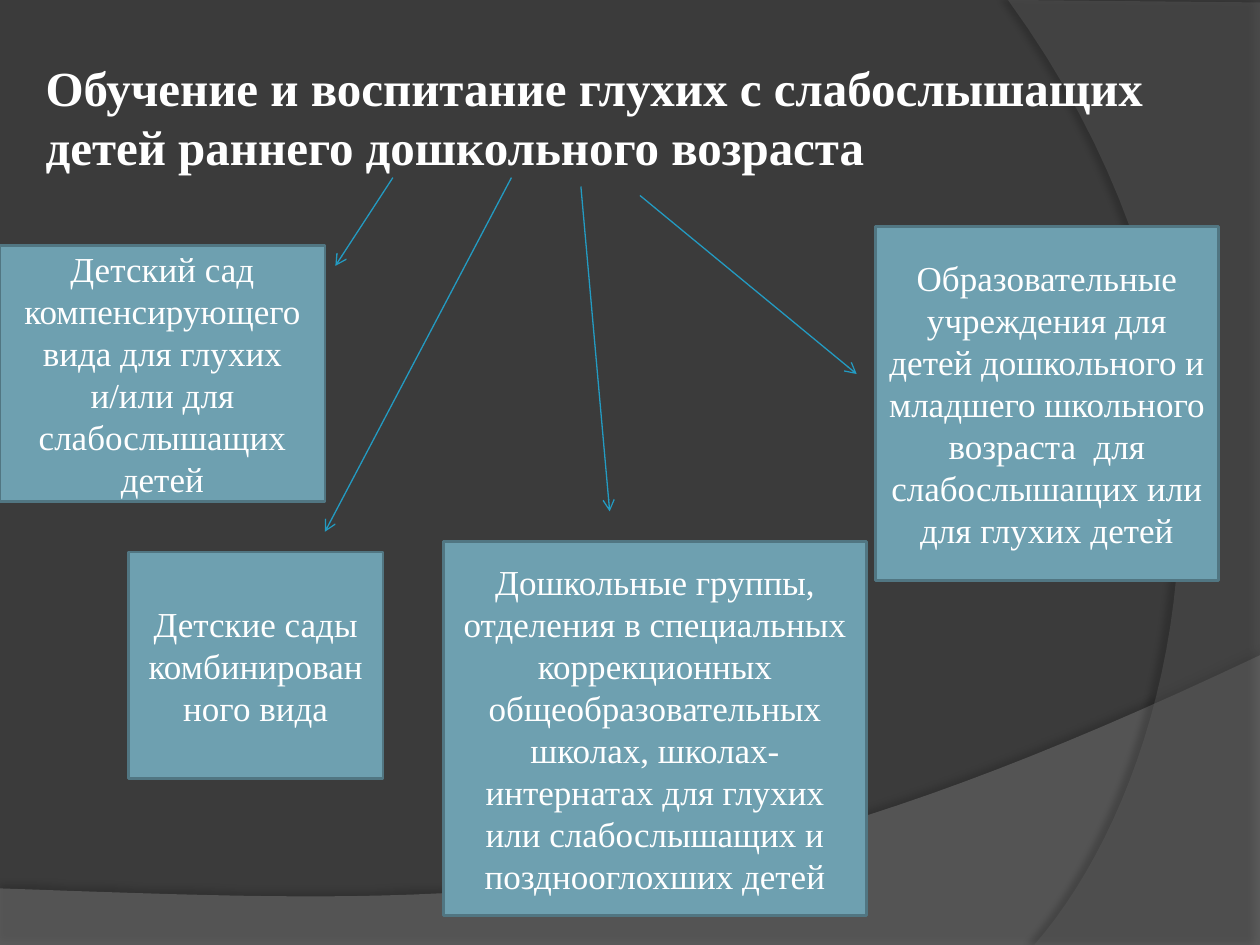
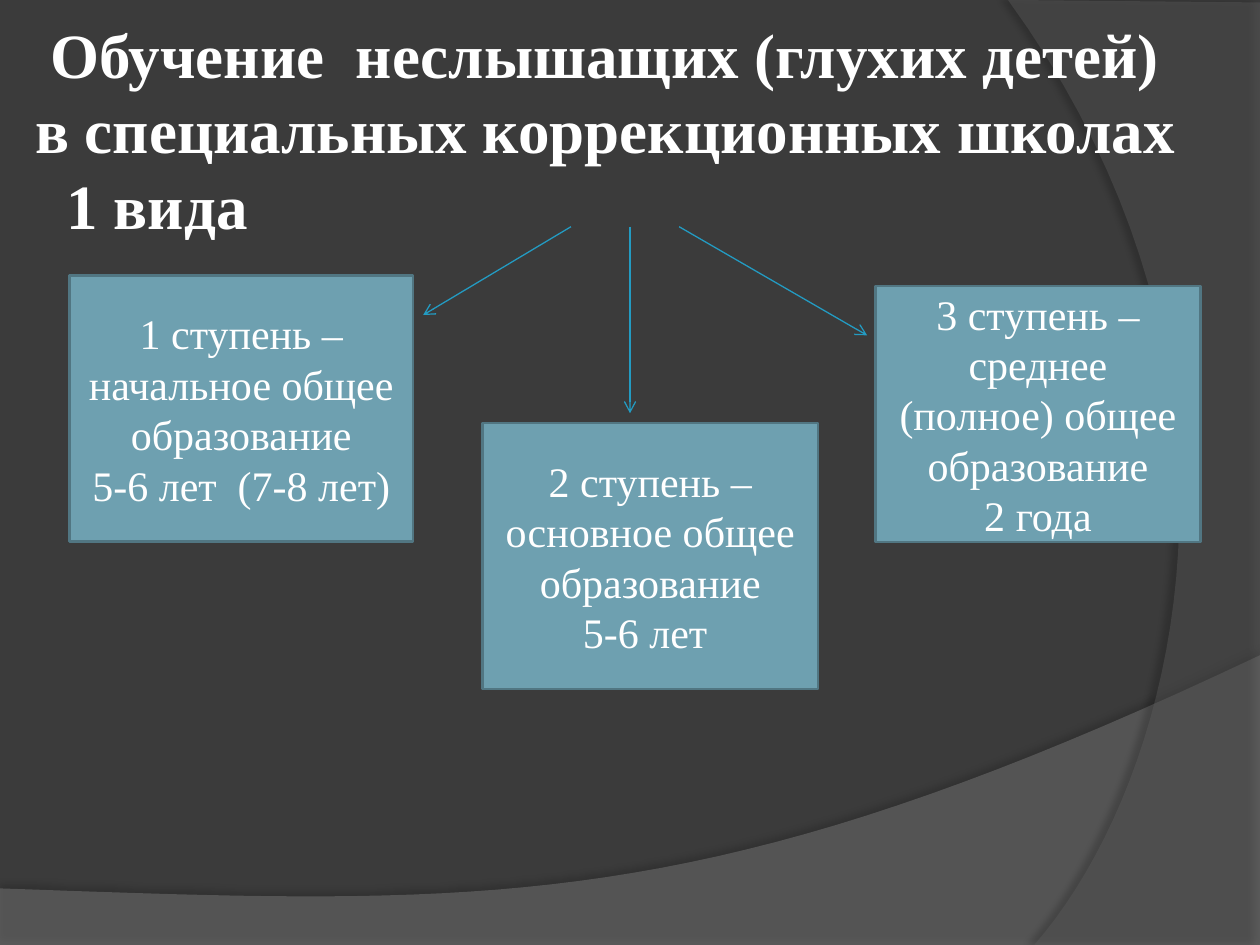
from lxml import etree
from pptx import Presentation
from pptx.dml.color import RGBColor
from pptx.enum.shapes import MSO_CONNECTOR, MSO_SHAPE
from pptx.enum.text import MSO_ANCHOR, MSO_AUTO_SIZE, PP_ALIGN
from pptx.oxml import parse_xml
from pptx.oxml.ns import nsdecls, qn
from pptx.util import Cm, Pt

RECT, LINE = MSO_SHAPE.RECTANGLE, MSO_CONNECTOR.STRAIGHT
LEFT, CENTER = PP_ALIGN.LEFT, PP_ALIGN.CENTER
MIDDLE, NO_FIT = MSO_ANCHOR.MIDDLE, MSO_AUTO_SIZE.NONE

FONT = "Times New Roman"
BACK, WHITE = "3B3B3B", "FFFFFF"
BOX, EDGE, ARROW = "6EA0B0", "517682", "239BC2"


def paint(fill, color):
    fill.solid()
    fill.fore_color.rgb = RGBColor.from_string(color)


def write(frame, text, size=20, bold=False, align=CENTER, pad=(0.25, 0.13)):
    frame.word_wrap = True
    frame.auto_size = NO_FIT
    frame.vertical_anchor = MIDDLE
    frame.margin_left = frame.margin_right = Cm(pad[0])
    frame.margin_top = frame.margin_bottom = Cm(pad[1])
    frame.text = text
    for par in frame.paragraphs:
        par.alignment = align
        for run in par.runs:
            run.font.name = FONT
            run.font.size = Pt(size)
            run.font.bold = bold
            paint(run.font.fill, WHITE)


# Content: boxes are left, top, width, height; arrows are x1, y1, x2, y2 (cm)
pages = [
    dict(
        title="Обучение и воспитание глухих с слабослышащих   детей раннего дошкольного возраста",
        place=(0.79, 0.76, 24.21, 3.18), head=28, size=20,
        boxes=[
            ("Детский сад компенсирующего вида для глухих и/или для слабослышащих детей",
             (0, 4.95, 6.55, 5.16)),
            ("Детские сады комбинированного вида", (2.59, 11.13, 5.13, 4.57)),
            ("Дошкольные группы, отделения в специальных коррекционных "
             "общеобразовательных школах, школах-интернатах для глухих или "
             "слабослышащих и позднооглохших детей", (8.94, 10.92, 8.53, 7.54)),
            ("Образовательные учреждения для детей дошкольного и младшего школьного "
             "возраста  для слабослышащих или для глухих детей", (17.65, 4.57, 6.91, 7.14)),
        ],
        arrows=[(7.92, 3.58, 6.76, 5.36), (10.31, 3.58, 6.55, 10.72),
                (11.71, 3.76, 12.29, 10.31), (12.9, 3.94, 17.27, 7.54)],
    ),
    dict(
        title=" Обучение  неслышащих (глухих детей) в специальных коррекционных школах   1 вида",
        place=(0.58, 0.41, 23.42, 4.37), head=36, size=24,
        boxes=[
            ("1 ступень – начальное общее образование\n5-6 лет  (7-8 лет)",
             (1.4, 5.56, 6.93, 5.36)),
            ("2 ступень – основное общее образование\n5-6 лет ", (9.73, 8.53, 6.76, 5.36)),
            ("3 ступень – среднее (полное) общее образование\n2 года",
             (17.65, 5.77, 6.55, 5.16)),
        ],
        arrows=[(11.51, 4.57, 8.53, 6.35), (12.7, 4.57, 12.7, 8.33),
                (13.69, 4.57, 17.48, 6.76)],
    ),
]

# Bands: straight corners, then a curve from the last corner
bands = [
    dict(color="7F7F7F", alpha=45, dark=35, dist=3.5, turn=270,
         edge=[(0, 17.91), (0, 19.05), (25.4, 19.05), (25.4, 13.21)],
         curve=[(14.2, 18.52), (9.93, 18.26), (0, 17.91)]),
    dict(color="5E5E5E", alpha=40, dark=45, dist=4, turn=180,
         edge=[(25.4, 0.05), (25.4, 19.05), (20.85, 19.05)],
         curve=[(23.75, 15.72), (25.86, 7.62), (20.32, 0)]),
]

deck = Presentation()
deck.slide_width, deck.slide_height = Cm(25.4), Cm(19.05)
master = deck.slide_master
paint(master.background.fill, BACK)

# Slides
for page in pages:
    slide = deck.slides.add_slide(deck.slide_layouts[5])
    title = slide.shapes.title
    title.left, title.top, title.width, title.height = map(Cm, page["place"])
    write(title.text_frame, page["title"], size=page["head"], bold=True,
          align=LEFT, pad=(0.13, 0.13))

    for text, place in page["boxes"]:
        box = slide.shapes.add_shape(RECT, *map(Cm, place))
        box.shadow.inherit = False
        paint(box.fill, BOX)
        paint(box.line.fill, EDGE)
        box.line.width = Pt(1.5)
        write(box.text_frame, text, size=page["size"])

    for ends in page["arrows"]:
        arrow = slide.shapes.add_connector(LINE, *map(Cm, ends))
        paint(arrow.line.fill, ARROW)
        arrow.line.width = Pt(0.75)
        props = arrow._element.spPr
        etree.SubElement(props.find(qn("a:ln")), qn("a:tailEnd"), type="arrow")
        etree.SubElement(props, qn("a:effectLst"))

# Shared bands, drawn once and moved to the master
STEPS = 40
for band in bands:
    points = list(band["edge"])
    knots = [points[-1]] + band["curve"]
    for step in range(1, STEPS + 1):
        t = step / STEPS
        parts = ((1 - t) ** 3, 3 * t * (1 - t) ** 2, 3 * t * t * (1 - t), t ** 3)
        points.append([sum(p * k[axis] for p, k in zip(parts, knots)) for axis in (0, 1)])
    spots = [(Cm(x), Cm(y)) for x, y in points]
    pen = slide.shapes.build_freeform(*spots[0])
    pen.add_line_segments(spots[1:])
    shape = pen.convert_to_shape()
    paint(shape.fill, band["color"])
    shape.line.fill.background()
    props = shape._element.spPr
    tint = props.find(qn("a:solidFill"))[0]
    etree.SubElement(tint, qn("a:alpha"), val=str(band["alpha"] * 1000))
    props.append(parse_xml(
        f'<a:effectLst {nsdecls("a")}><a:outerShdw blurRad="{Pt(4)}" '
        f'dist="{Pt(band["dist"])}" dir="{band["turn"] * 60000}" rotWithShape="0">'
        f'<a:srgbClr val="000000"><a:alpha val="{band["dark"] * 1000}"/></a:srgbClr>'
        f'</a:outerShdw></a:effectLst>'))
    master.shapes.element.append(shape._element)

deck.save("out.pptx")
